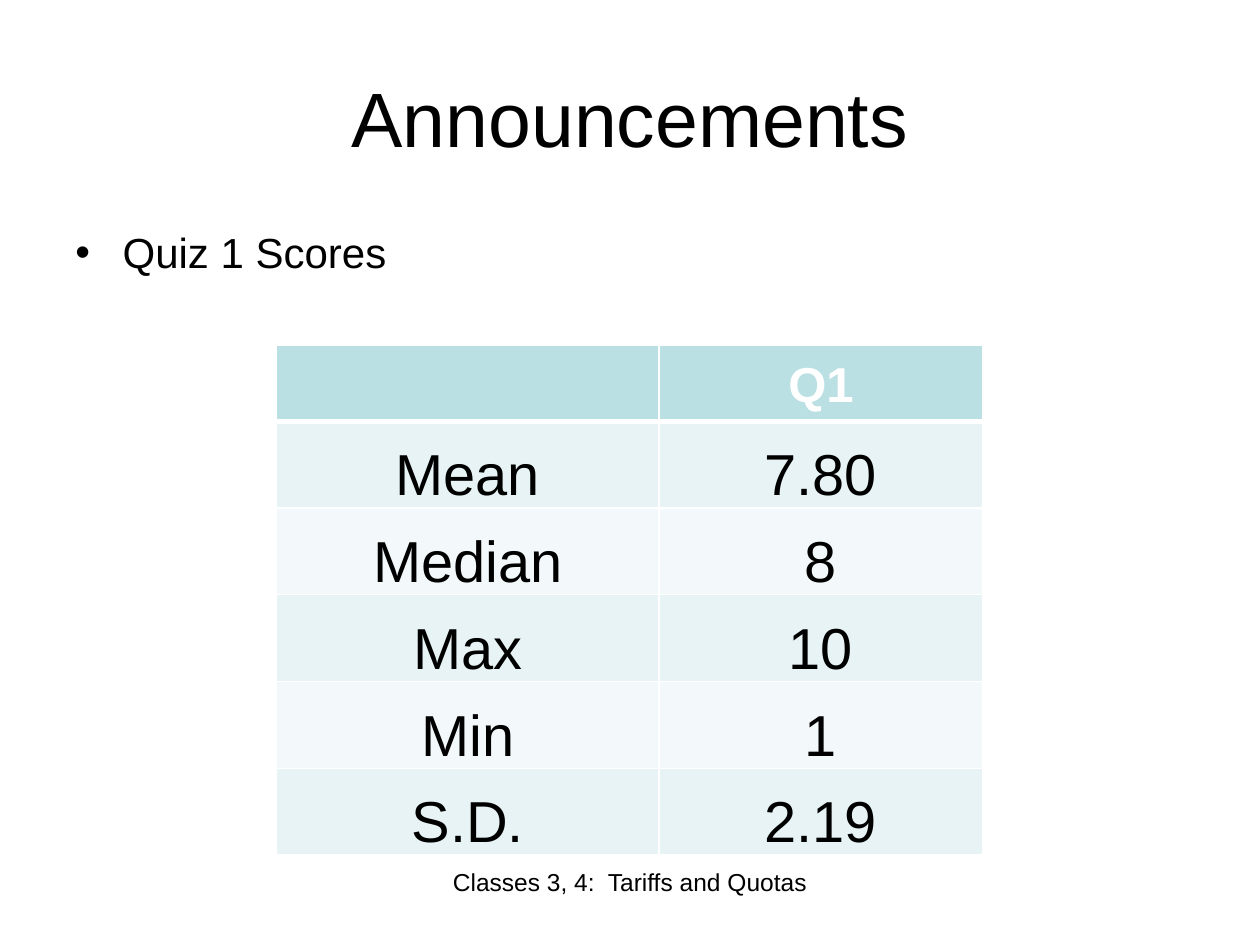
from lxml.etree import SubElement
from pptx import Presentation
from pptx.dml.color import RGBColor
from pptx.enum.text import MSO_ANCHOR as ANCHOR, PP_ALIGN as ALIGN
from pptx.oxml import parse_xml
from pptx.oxml.ns import nsdecls, qn
from pptx.util import Pt


def rgb(code):
    return RGBColor.from_string(code)


def write(tf, text, size, color="000000", bold=False, align=ALIGN.CENTER):
    p = tf.paragraphs[0]
    p.alignment = align
    r = p.add_run()
    r.text = text
    r.font.color.rgb = rgb(color)
    for name, value in {"name": "Arial", "size": Pt(size), "bold": bold}.items():
        setattr(r.font, name, value)
    return p


prs = Presentation()
prs.slide_width, prs.slide_height = Pt(720), Pt(540)
s = prs.slides.add_slide(prs.slide_layouts[5])

# Title
title = s.shapes.title
for name, value in {"left": 36, "top": 21.6, "width": 648, "height": 90}.items():
    setattr(title, name, Pt(value))
title.text_frame.vertical_anchor = ANCHOR.MIDDLE
write(title.text_frame, "Announcements", 44)

# Bulleted line
sp = s.shapes.add_textbox(Pt(36), Pt(126), Pt(648), Pt(356.4))
sp.text_frame.word_wrap = True
p = write(sp.text_frame, "Quiz 1 Scores", 24, align=ALIGN.LEFT)
p.space_before = Pt(4)
pPr = p._p.get_or_add_pPr()
pPr.set("marL", str(Pt(27)))
pPr.set("indent", str(-Pt(27)))
SubElement(pPr, qn("a:buFont"), typeface="Arial")
SubElement(pPr, qn("a:buChar"), char="•")

# Footer
sp = s.shapes.add_textbox(Pt(246), Pt(492), Pt(228), Pt(37.5))
sp.text_frame.word_wrap = True
write(sp.text_frame, "Classes 3, 4:  Tariffs and Quotas", 14)

# Score table
rows = [("", "Q1"), ("Mean", "7.80"), ("Median", "8"),
        ("Max", "10"), ("Min", "1"), ("S.D.", "2.19")]
widths, heights = [218.7, 184.9], [43.2] + [49.6] * 5
table = s.shapes.add_table(len(rows), 2, Pt(158), Pt(197.5),
                           Pt(sum(widths)), Pt(sum(heights))).table
for col, width in zip(table.columns, widths):
    col.width = Pt(width)
for row, height in zip(table.rows, heights):
    row.height = Pt(height)

for i, texts in enumerate(rows):
    header = i == 0
    fill = "BBE0E3" if header else ("F3F9FA", "E7F3F4")[i % 2]
    for j, text in enumerate(texts):
        cell = table.cell(i, j)
        cell.fill.solid()
        cell.fill.fore_color.rgb = rgb(fill)
        layout = {"margin_left": Pt(2), "margin_top": Pt(2),
                  "margin_right": Pt(2), "margin_bottom": 0,
                  "vertical_anchor": ANCHOR.MIDDLE if header else ANCHOR.BOTTOM}
        for name, value in layout.items():
            setattr(cell, name, value)
        if text:
            write(cell.text_frame, text, 28 if header else 33,
                  "FFFFFF" if header else "000000", header)
        # White borders, thicker between header and body
        tcPr = cell._tc.get_or_add_tcPr()
        for k, side in enumerate("LRTB"):
            thick = (side == "B" and i == 0) or (side == "T" and i == 1)
            tcPr.insert(k, parse_xml(
                f'<a:ln{side} {nsdecls("a")} w="{Pt(3 if thick else 1)}"><a:solidFill>'
                f'<a:srgbClr val="FFFFFF"/></a:solidFill></a:ln{side}>'))

prs.save("out.pptx")
